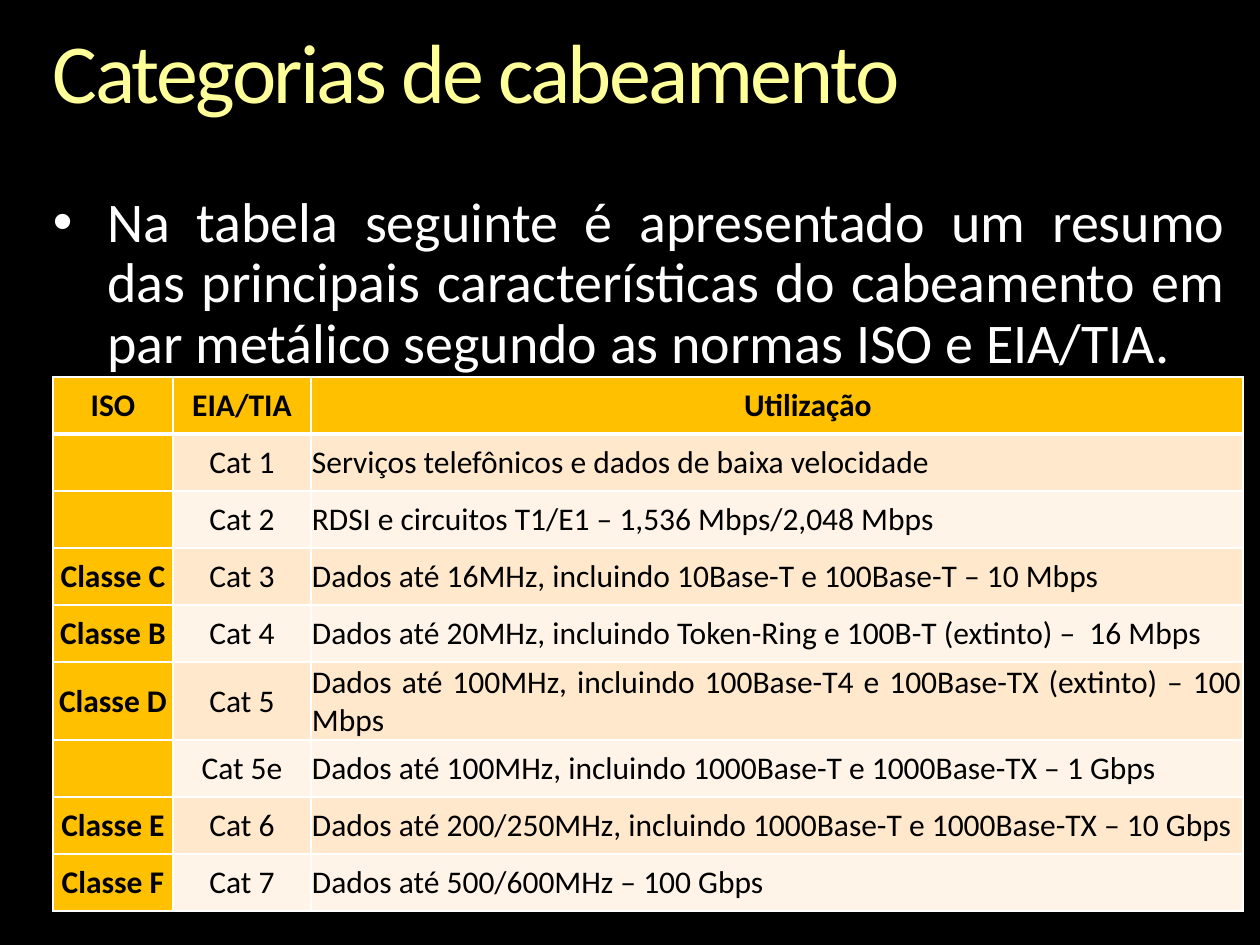
from lxml.etree import SubElement as Sub, Element as Elem
from pptx import Presentation
from pptx.dml.color import RGBColor as Rgb
from pptx.enum.text import MSO_ANCHOR as Anchor, MSO_AUTO_SIZE as Auto, PP_ALIGN as Align
from pptx.oxml.ns import qn
from pptx.util import Emu, Pt

SCALE = 914400 / 126
FONT = "Calibri"
HUES = {"back": "000000", "text": "FFFFFF", "ink": "000000", "line": "FFFFFF",
        "gold": "FFC000", "dark": "FFE8CC", "light": "FFF4E7"}
GLOW = ((0, "FFFFB9"), (36, "FFFF99"), (86, "F6AE1E"))
COLS = (120, 138, 932)
ROW = 57
HEAD = ("ISO", "EIA/TIA", "Utilização")
BODY = (
    ("", "Cat 1", "Serviços telefônicos e dados de baixa velocidade"),
    ("", "Cat 2", "RDSI e circuitos T1/E1 – 1,536 Mbps/2,048 Mbps"),
    ("Classe C", "Cat 3", "Dados até 16MHz, incluindo 10Base-T e 100Base-T – 10 Mbps"),
    ("Classe B", "Cat 4", "Dados até 20MHz, incluindo Token-Ring e 100B-T (extinto) –  16 Mbps"),
    ("Classe D", "Cat 5", "Dados até 100MHz, incluindo 100Base-T4 e 100Base-TX (extinto) – 100 Mbps"),
    ("", "Cat 5e", "Dados até 100MHz, incluindo 1000Base-T e 1000Base-TX – 1 Gbps"),
    ("Classe E", "Cat 6", "Dados até 200/250MHz, incluindo 1000Base-T e 1000Base-TX – 10 Gbps"),
    ("Classe F", "Cat 7", "Dados até 500/600MHz – 100 Gbps"),
)


def px(n):
    """Turn pixels into EMU."""
    return Emu(round(n * SCALE))


def hue(name):
    """Look up a colour by name."""
    return Rgb.from_string(HUES[name])


def add_run(para, text, size, tone, bold=False):
    """Add one formatted run to a paragraph."""
    run = para.add_run()
    run.text = text
    font = run.font
    font.name, font.size, font.bold = FONT, Pt(size), bold
    font.color.rgb = hue(tone)
    return run


def indent(para, left, first):
    """Set the left margin and first-line indent."""
    props = para._p.get_or_add_pPr()
    props.set("marL", str(px(left)))
    props.set("indent", str(px(first)))
    return props


def set_box(shape, left, top, width, height):
    """Place a placeholder and return its first paragraph."""
    shape.left, shape.top, shape.width, shape.height = map(px, (left, top, width, height))
    frame = shape.text_frame
    frame.margin_left = frame.margin_top = frame.margin_right = frame.margin_bottom = 0
    frame.word_wrap = True
    frame.auto_size = Auto.NONE
    frame.vertical_anchor = Anchor.TOP
    para = frame.paragraphs[0]
    para.line_spacing = 0.9
    para.space_before = Pt(0)
    return para


def shade(run):
    """Give a run the vertical title gradient and tight spacing."""
    props = run.font._element
    props.set("spc", "-150")
    props.remove(props.find(qn("a:solidFill")))
    grad = Elem(qn("a:gradFill"))
    stops = Sub(grad, qn("a:gsLst"))
    for spot, tone in GLOW:
        stop = Sub(stops, qn("a:gs"), pos=str(spot * 1000))
        Sub(stop, qn("a:srgbClr"), val=tone)
    Sub(grad, qn("a:lin"), ang="5400000", scaled="0")
    props.insert(0, grad)


def add_title(slide, text):
    """Fill the title placeholder."""
    para = set_box(slide.shapes.title, 53, 31, 1155, 92)
    para.alignment = Align.LEFT
    shade(add_run(para, text, 48, "text"))


def add_list(slide, text):
    """Fill the body placeholder with one bullet."""
    para = set_box(slide.placeholders[1], 53, 194, 1173, 183)
    para.alignment = Align.JUSTIFY
    props = indent(para, 54, -54)
    Sub(props, qn("a:buFont"), typeface="Arial")
    Sub(props, qn("a:buChar"), char="•")
    add_run(para, text, 32, "text")


def edge(cell, row):
    """Draw the four cell borders, thick below the header."""
    props = cell._tc.get_or_add_tcPr()
    wide = {"T": 3 if row == 1 else 1, "B": 3 if row == 0 else 1}
    for side in "LRTB":
        line = Sub(props, qn(f"a:ln{side}"), w=str(Pt(wide.get(side, 1))))
        fill = Sub(line, qn("a:solidFill"))
        Sub(fill, qn("a:srgbClr"), val=HUES["line"])


def set_cell(cell, row, col, text):
    """Format and fill one table cell."""
    edge(cell, row)
    band = "dark" if row % 2 else "light"
    cell.fill.solid()
    cell.fill.fore_color.rgb = hue("gold" if row == 0 or col == 0 else band)
    cell.vertical_anchor = Anchor.MIDDLE
    wide = row == 0 and col == 2
    cell.margin_left = cell.margin_right = px(6 if wide else 1)
    cell.margin_top, cell.margin_bottom = px(0 if wide else 1), 0
    para = cell.text_frame.paragraphs[0]
    para.alignment = Align.JUSTIFY if row and col == 2 else Align.CENTER
    if wide:
        indent(para, 0, 62)
    if text:
        add_run(para, text, 18, "ink", row == 0 or col == 0)


def add_grid(slide):
    """Add the table of cabling categories."""
    data = (HEAD, *BODY)
    size = map(px, (53, 377, sum(COLS), ROW * len(data)))
    table = slide.shapes.add_table(len(data), len(COLS), *size).table
    table.horz_banding = False
    for col, width in zip(table.columns, COLS):
        col.width = px(width)
    for r, texts in enumerate(data):
        table.rows[r].height = px(ROW)
        for c, text in enumerate(texts):
            set_cell(table.cell(r, c), r, c, text)


def main():
    """Build and save the slide."""
    deck = Presentation()
    deck.slide_width, deck.slide_height = px(1260), px(945)
    slide = deck.slides.add_slide(deck.slide_layouts[1])
    slide.background.fill.solid()
    slide.background.fill.fore_color.rgb = hue("back")
    add_title(slide, "Categorias de cabeamento")
    add_list(slide, "Na tabela seguinte é apresentado um resumo das principais "
             "características do cabeamento em par metálico segundo as normas ISO e EIA/TIA.")
    add_grid(slide)
    deck.save("out.pptx")


if __name__ == "__main__":
    main()
